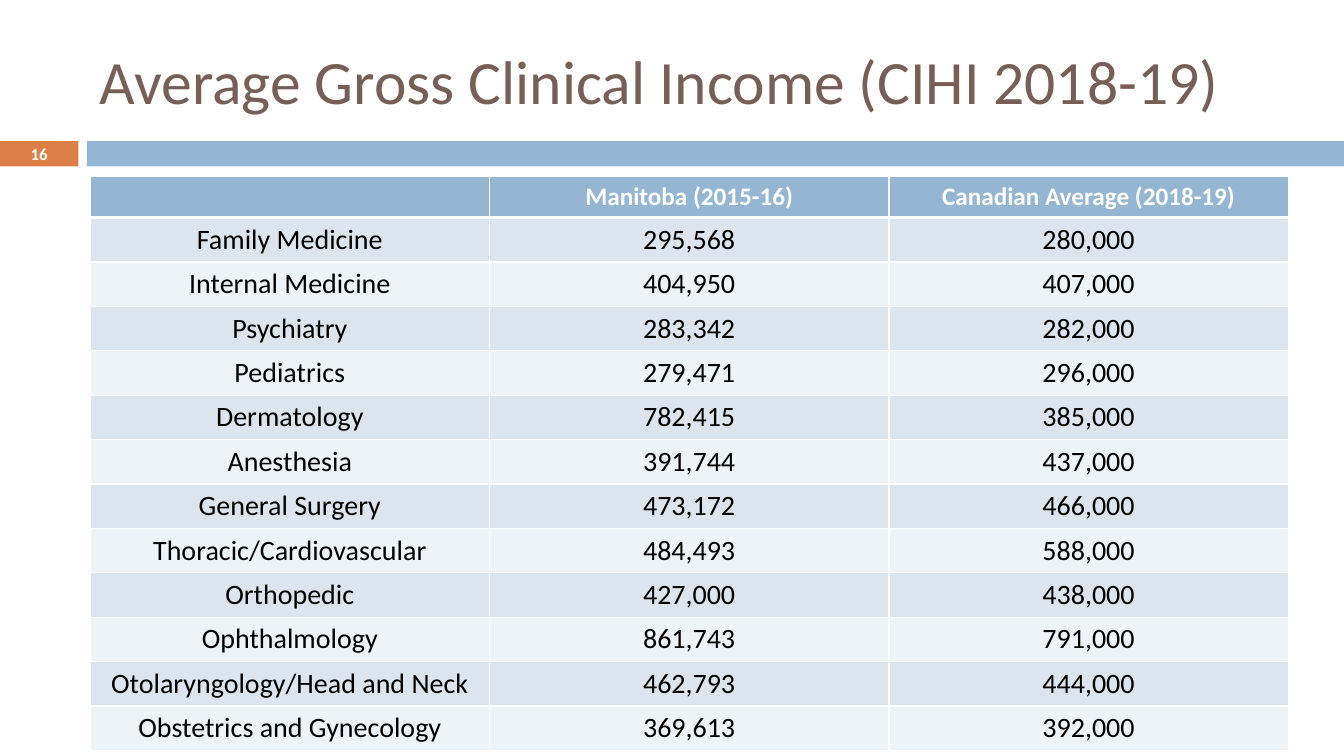
from lxml.etree import SubElement
from pptx import Presentation
from pptx.dml.color import RGBColor as RGB
from pptx.enum.shapes import MSO_SHAPE as SHAPE
from pptx.enum.text import MSO_ANCHOR as ANCHOR, PP_ALIGN as ALIGN
from pptx.oxml.ns import qn
from pptx.util import Pt

THEME = {
    "font": "Calibri",
    "white": "FFFFFF", "black": "000000", "brown": "775F55",
    "orange": "DD8047", "blue": "94B6D2",
    "bands": ("DCE5EE", "EEF3F7"),
    "title": 44, "body": 20, "head": 18, "number": 12,
}


def write(tf, text, size, color, bold=False, align=ALIGN.CENTER):
    tf.word_wrap = True
    p = tf.paragraphs[0]
    p.alignment = align
    r = p.add_run()
    r.text = text
    r.font.name = THEME["font"]
    r.font.size = Pt(THEME[size])
    r.font.bold = bold
    r.font.color.rgb = RGB.from_string(THEME[color])


def add_border(cell, side, width):
    ln = SubElement(cell._tc.get_or_add_tcPr(), qn(f"a:ln{side}"), w=str(Pt(width)))
    fill = SubElement(ln, qn("a:solidFill"))
    SubElement(fill, qn("a:srgbClr"), val=THEME["white"])


prs = Presentation()
prs.slide_width, prs.slide_height = Pt(960), Pt(540)
s = prs.slides.add_slide(prs.slide_layouts[5])

for left, width, color in ((0, 56, "orange"), (62, 898, "blue")):
    sp = s.shapes.add_shape(SHAPE.RECTANGLE, Pt(left), Pt(100.8), Pt(width), Pt(18))
    sp.shadow.inherit = False
    sp.fill.solid()
    sp.fill.fore_color.rgb = RGB.from_string(THEME[color])
    sp.line.fill.background()

title = s.shapes.title
title.left, title.top, title.width, title.height = Pt(64), Pt(18), Pt(856), Pt(78)
title.text_frame.vertical_anchor = ANCHOR.MIDDLE
write(title.text_frame, "Average Gross Clinical Income (CIHI 2018-19)",
      "title", "brown", align=ALIGN.LEFT)

rows = [
    ("", "Manitoba (2015-16)", "Canadian Average (2018-19)"),
    ("Family Medicine", "295,568", "280,000"),
    ("Internal Medicine", "404,950", "407,000"),
    ("Psychiatry", "283,342", "282,000"),
    ("Pediatrics", "279,471", "296,000"),
    ("Dermatology", "782,415", "385,000"),
    ("Anesthesia", "391,744", "437,000"),
    ("General Surgery", "473,172", "466,000"),
    ("Thoracic/Cardiovascular", "484,493", "588,000"),
    ("Orthopedic", "427,000", "438,000"),
    ("Ophthalmology", "861,743", "791,000"),
    ("Otolaryngology/Head and Neck", "462,793", "444,000"),
    ("Obstetrics and Gynecology", "369,613", "392,000"),
]
table = s.shapes.add_table(len(rows), 3, Pt(64.4), Pt(126.2), Pt(855.9),
                           Pt(25.2 * len(rows))).table
for i, values in enumerate(rows):
    for j, text in enumerate(values):
        cell = table.cell(i, j)
        for side in "LRTB":
            under_header = (i, side) in ((0, "B"), (1, "T"))
            add_border(cell, side, 3 if under_header else 1)
        cell.fill.solid()
        color = THEME["bands"][(i - 1) % 2] if i else THEME["blue"]
        cell.fill.fore_color.rgb = RGB.from_string(color)
        if text:
            write(cell.text_frame, text, "body" if i else "head",
                  "black" if i else "white", bold=i == 0)

number = s.shapes.add_textbox(Pt(0), Pt(100), Pt(56), Pt(19.6))
tf = number.text_frame
tf.margin_top = tf.margin_bottom = 0
tf.vertical_anchor = ANCHOR.MIDDLE
write(tf, "16", "number", "white", bold=True)

prs.save("out.pptx")
